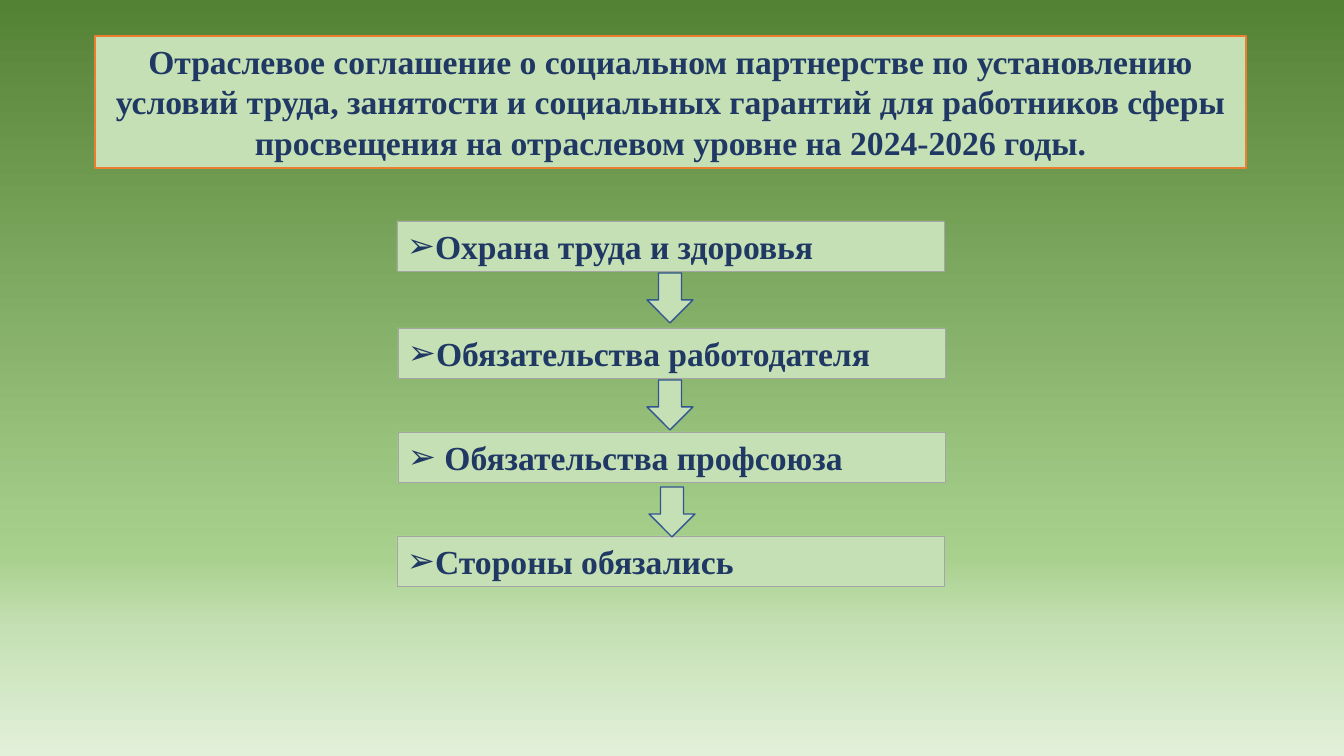
from copy import deepcopy

from lxml.etree import SubElement
from pptx import Presentation
from pptx.dml.color import RGBColor
from pptx.enum.shapes import MSO_SHAPE as SHAPE
from pptx.enum.text import MSO_ANCHOR as ANCHOR, MSO_AUTO_SIZE as AUTO, PP_ALIGN as ALIGN
from pptx.oxml.ns import qn
from pptx.util import Pt

PX = 914400 / 100.8
NAVY = RGBColor(0x20, 0x38, 0x64)
PALE = RGBColor(0xC5, 0xE0, 0xB4)
ORANGE = RGBColor(0xED, 0x7D, 0x31)
GRAY = RGBColor(0xA5, 0xA5, 0xA5)
BLUE = RGBColor(0x32, 0x54, 0x91)
BACKGROUND = [
    (0, RGBColor(0x54, 0x82, 0x35)),
    (0.74, RGBColor(0xA9, 0xD1, 0x8E)),
    (0.83, PALE),
    (1, RGBColor(0xE2, 0xF0, 0xD9)),
]
TITLE = (
    "Отраслевое соглашение о социальном партнерстве по установлению "
    "условий труда, занятости и социальных гарантий для работников сферы "
    "просвещения на отраслевом уровне на 2024-2026 годы."
)
STEPS = [
    (0, 0, "Охрана труда и здоровья"),
    (1, 107, "Обязательства работодателя"),
    (1, 211, " Обязательства профсоюза"),
    (0, 315, "Стороны обязались"),
]
ARROWS = [(250, 52), (250, 159), (252, 266)]


def px(n):
    """Turn pixels into EMU."""
    return round(n * PX)


def paint_background(s):
    """Fill the slide with a vertical green gradient."""
    fill = s.background.fill
    fill.gradient()
    fill.gradient_angle = 270
    stops = s.element.find(".//" + qn("a:gsLst"))
    while len(stops) < len(BACKGROUND):
        stops.append(deepcopy(stops[-1]))
    for stop, (position, color) in zip(fill.gradient_stops, BACKGROUND):
        stop.position = position
        stop.color.rgb = color


def add_block(s, kind, box, line, width):
    """Add a pale green shape with a coloured outline."""
    sp = s.shapes.add_shape(kind, *map(px, box))
    sp.shadow.inherit = False
    sp.fill.solid()
    sp.fill.fore_color.rgb = PALE
    sp.line.color.rgb = line
    sp.line.width = Pt(width)
    return sp


def add_text(sp, text, align):
    """Write one bold navy paragraph in a shape and return it."""
    tf = sp.text_frame
    tf.word_wrap = True
    tf.auto_size = AUTO.SHAPE_TO_FIT_TEXT
    tf.vertical_anchor = ANCHOR.TOP
    p = tf.paragraphs[0]
    p.alignment = align
    r = p.add_run()
    r.text = text
    r.font.name = "Times New Roman"
    r.font.size = Pt(24)
    r.font.bold = True
    r.font.color.rgb = NAVY
    return p


def add_bullet(p):
    """Give a paragraph a hanging arrowhead bullet."""
    pPr = p._p.get_or_add_pPr()
    pPr.set("marL", str(px(23)))
    pPr.set("indent", str(-px(23)))
    SubElement(pPr, qn("a:buFont")).set("typeface", "Arial")
    SubElement(pPr, qn("a:buChar")).set("char", "➢")


def add_title(s, box):
    """Place the framed heading."""
    sp = add_block(s, SHAPE.RECTANGLE, box, ORANGE, 1)
    add_text(sp, TITLE, ALIGN.CENTER)


def add_steps(s, x, y):
    """Place the column of steps and the arrows between them."""
    for dx, dy, text in STEPS:
        sp = add_block(s, SHAPE.RECTANGLE, (x + dx, y + dy, 547, 50), GRAY, 0.5)
        add_bullet(add_text(sp, text, ALIGN.LEFT))
    for dx, dy in ARROWS:
        add_block(s, SHAPE.DOWN_ARROW, (x + dx, y + dy, 46, 50), BLUE, 1)


def main():
    """Build the slide and save it."""
    prs = Presentation()
    prs.slide_width, prs.slide_height = px(1344), px(756)
    s = prs.slides.add_slide(prs.slide_layouts[6])
    paint_background(s)
    add_title(s, (95, 36, 1151, 132))
    add_steps(s, 397, 221)
    prs.save("out.pptx")


if __name__ == "__main__":
    main()
